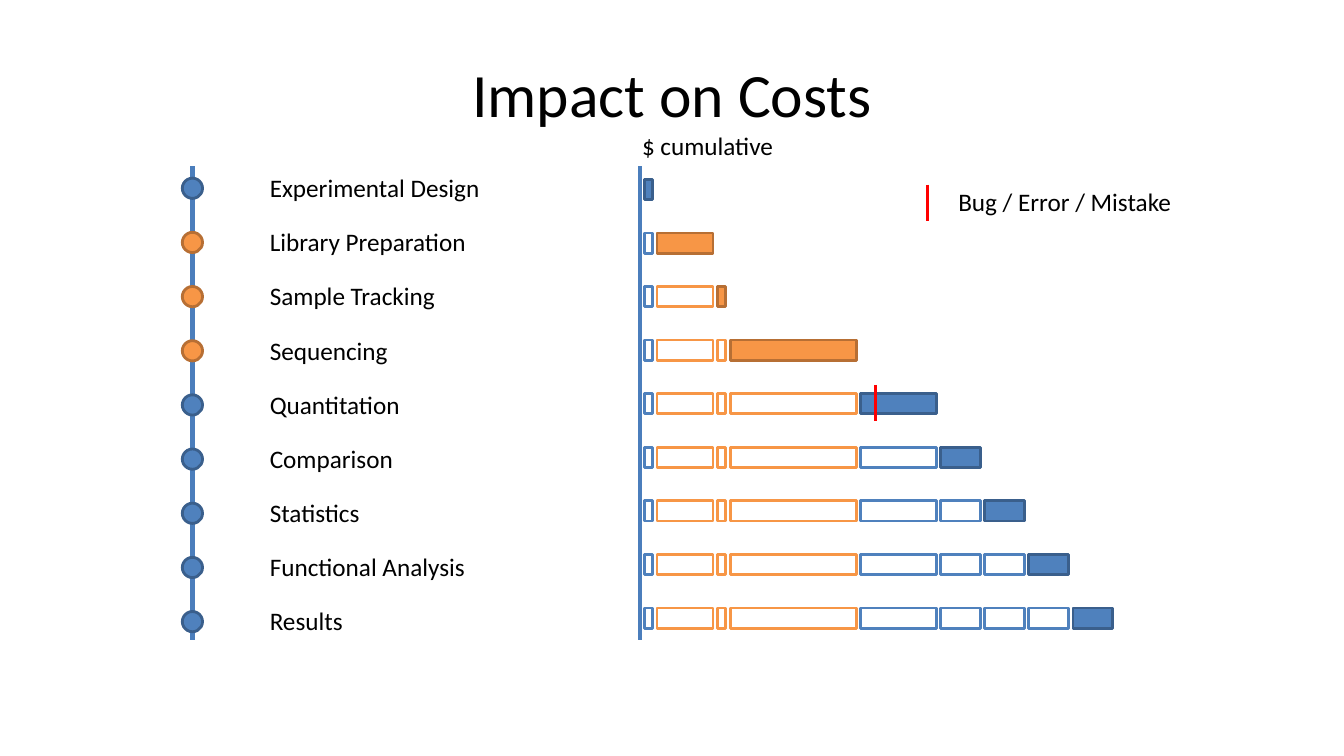
import lxml.etree
import pptx
import pptx.dml.color
import pptx.enum.shapes
import pptx.enum.text
import pptx.oxml.ns
import pptx.util
from pptx.util import Cm

BLACK = pptx.dml.color.RGBColor(0x00, 0x00, 0x00)
WHITE = pptx.dml.color.RGBColor(0xFF, 0xFF, 0xFF)
RED = pptx.dml.color.RGBColor(0xFF, 0x00, 0x00)
AXIS_BLUE = pptx.dml.color.RGBColor(0x4B, 0x7E, 0xBC)
BLUE = pptx.dml.color.RGBColor(0x4F, 0x81, 0xBD)
DARK_BLUE = pptx.dml.color.RGBColor(0x3A, 0x5F, 0x8C)
ORANGE = pptx.dml.color.RGBColor(0xF7, 0x96, 0x46)
DARK_ORANGE = pptx.dml.color.RGBColor(0xB7, 0x6F, 0x34)
OUTLINES = {BLUE: DARK_BLUE, ORANGE: DARK_ORANGE}

# Stage name, label width, cost bar width, colour
STAGES = [
    ("Experimental Design", 5.87, 0.21, BLUE),
    ("Library Preparation", 5.51, 1.41, ORANGE),
    ("Sample Tracking", 4.72, 0.21, ORANGE),
    ("Sequencing", 3.53, 3.18, ORANGE),
    ("Quantitation", 3.84, 1.91, BLUE),
    ("Comparison", 3.66, 1, BLUE),
    ("Statistics", 2.79, 1, BLUE),
    ("Functional Analysis", 5.49, 1, BLUE),
    ("Results", 2.36, 1, BLUE),
]
MARK_HEIGHT = 0.51
BUG_HEIGHT = 0.91
LABEL_HEIGHT = 1.02


def write_run(paragraph, text, size):
    """Add one black Calibri run."""
    run = paragraph.add_run()
    run.text = text
    run.font.name = "Calibri"
    run.font.size = pptx.util.Pt(size)
    run.font.color.rgb = BLACK


def add_label(shapes, text, left, top, width):
    """Add a single-line text box."""
    box = shapes.add_textbox(Cm(left), Cm(top), Cm(width), Cm(LABEL_HEIGHT))
    box.text_frame.word_wrap = False
    box.text_frame.auto_size = pptx.enum.text.MSO_AUTO_SIZE.SHAPE_TO_FIT_TEXT
    write_run(box.text_frame.paragraphs[0], text, 18)


def add_upright(shapes, left, top, height, color, weight):
    """Add a vertical line without a shadow."""
    line = shapes.add_connector(
        pptx.enum.shapes.MSO_CONNECTOR.STRAIGHT,
        Cm(left), Cm(top), Cm(left), Cm(top + height))
    line.line.color.rgb = color
    line.line.width = pptx.util.Pt(weight)
    lxml.etree.SubElement(line._element.spPr, pptx.oxml.ns.qn("a:effectLst"))


def add_mark(shapes, kind, left, top, width, fill, outline):
    """Add a flat outlined bar or dot."""
    mark = shapes.add_shape(kind, Cm(left), Cm(top), Cm(width), Cm(MARK_HEIGHT))
    mark.shadow.inherit = False
    mark.fill.solid()
    mark.fill.fore_color.rgb = fill
    mark.line.color.rgb = outline
    mark.line.width = pptx.util.Pt(2)


def add_title(slide, left, top, width, height):
    """Place and fill the title placeholder."""
    title = slide.shapes.title
    title.left, title.top, title.width, title.height = map(Cm, (left, top, width, height))
    title.text_frame.vertical_anchor = pptx.enum.text.MSO_ANCHOR.MIDDLE
    paragraph = title.text_frame.paragraphs[0]
    paragraph.alignment = pptx.enum.text.PP_ALIGN.CENTER
    write_run(paragraph, "Impact on Costs", 44)


def add_legend(slide, left, top):
    """Explain the red error marker."""
    add_upright(slide.shapes, left, top, BUG_HEIGHT, RED, 2.25)
    add_label(slide.shapes, "Bug / Error / Mistake", left + 0.53, top - 0.08, 5.94)


def add_cost_chart(slide, left, top, height):
    """Stack the cost of every stage so far, one row per stage."""
    shapes = slide.shapes.add_group_shape().shapes
    add_label(shapes, "$ cumulative", left - 0.2, top - LABEL_HEIGHT, 3.86)
    add_upright(shapes, left, top, height, AXIS_BLUE, 3)
    first_top, pitch, gap = top + 0.33, 1.35, 0.11
    for row in range(len(STAGES)):
        bar_left = left + gap
        bar_top = first_top + row * pitch
        for column, (name, label_width, cost, color) in enumerate(STAGES[:row + 1]):
            current = column == row
            add_mark(shapes, pptx.enum.shapes.MSO_SHAPE.RECTANGLE,
                     bar_left, bar_top, cost,
                     color if current else WHITE,
                     OUTLINES[color] if current else color)
            if current and name == "Quantitation":
                bug_left, bug_top = bar_left + 0.38, bar_top - 0.22
            bar_left += cost + gap
    add_upright(shapes, bug_left, bug_top, BUG_HEIGHT, RED, 2.25)


def add_timeline(slide, left, top, height):
    """List the stages beside a line of dots."""
    shapes = slide.shapes.add_group_shape().shapes
    add_upright(shapes, left, top, height, AXIS_BLUE, 3)
    pitch = 1.365
    for row, (name, label_width, cost, color) in enumerate(STAGES):
        row_top = top + row * pitch
        add_label(shapes, name, left + 1.7, row_top + 0.03, label_width)
        add_mark(shapes, pptx.enum.shapes.MSO_SHAPE.OVAL,
                 left - MARK_HEIGHT / 2, row_top + 0.3, MARK_HEIGHT,
                 color, OUTLINES[color])


def main():
    """Build and save the slide."""
    presentation = pptx.Presentation()
    presentation.slide_width = Cm(33.87)
    presentation.slide_height = Cm(19.05)
    slide = presentation.slides.add_slide(presentation.slide_layouts[5])
    add_title(slide, 1.7, 0.76, 30.48, 3.18)
    add_legend(slide, 23.37, 4.65)
    add_cost_chart(slide, 16.13, 4.19, 11.94)
    add_timeline(slide, 4.85, 4.19, 11.94)
    presentation.save("out.pptx")


if __name__ == "__main__":
    main()
